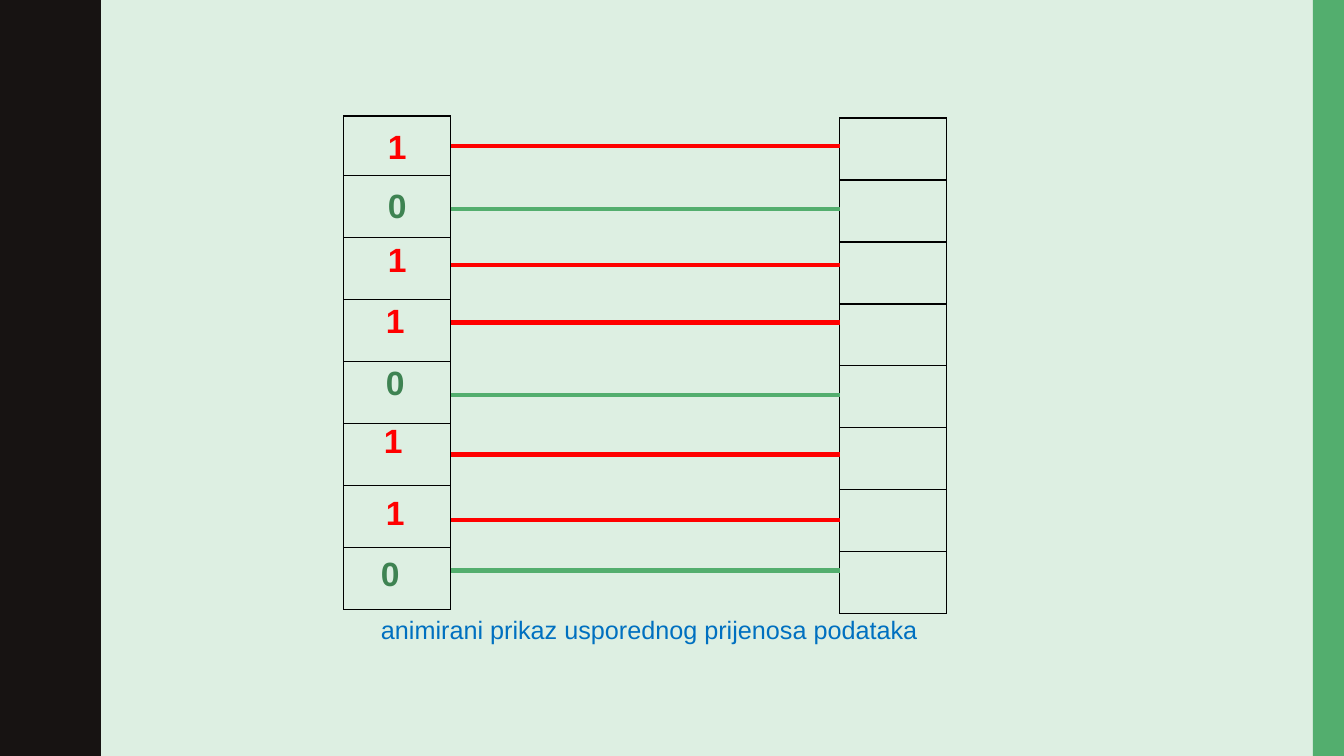
import pptx
import pptx.util
import pptx.dml.color
import pptx.enum.shapes
import pptx.enum.text
import pptx.oxml
import pptx.oxml.ns
from dataclasses import dataclass

BITS = [
    {"digit": "1", "center": (3.94, 1.45), "wire": 1.45},
    {"digit": "0", "center": (3.94, 2.03), "wire": 2.07},
    {"digit": "1", "center": (3.94, 2.57), "wire": 2.63},
    {"digit": "1", "center": (3.92, 3.18), "wire": 3.2},
    {"digit": "0", "center": (3.92, 3.79), "wire": 3.92},
    {"digit": "1", "center": (3.9, 4.37), "wire": 4.51},
    {"digit": "1", "center": (3.92, 5.08), "wire": 5.16},
    {"digit": "0", "center": (3.87, 5.69), "wire": 5.66},
]
CAPTION = "animirani prikaz usporednog prijenosa podataka"
HALF_WAVE = [
    (0.78, 0), (0.78, 0.07), (0.79, 0.14), (0.8, 0.2), (0.81, 0.25),
    (0.83, 0.29), (0.85, 0.33), (0.87, 0.38), (0.89, 0.42), (0.91, 0.46),
    (0.93, 0.5), (0.95, 0.55), (0.96, 0.61), (0.97, 0.68), (0.97, 0.75),
]
WAVE_COUNT = 5


@dataclass
class Theme:
    font: str = "Arial"
    background: str = "DDEFE2"
    dark: str = "171312"
    green: str = "53AE6E"
    zero: str = "3E8352"
    red: str = "FF0000"
    caption: str = "0070C0"
    border: str = "000000"
    digit_size: int = 24
    caption_size: int = 18
    wire_width: int = 3
    border_width: int = 1


THEME = Theme()
WIDTH, HEIGHT = 13.33, 7.5
CELL_WIDTH, CELL_HEIGHT = 1.06, 0.615
SENDER_LEFT, RECEIVER_LEFT = 3.41, 8.33
DIGIT_WIDTH, DIGIT_HEIGHT = 0.66, 0.6
inch = pptx.util.Inches


def color(value):
    return pptx.dml.color.RGBColor.from_string(value)


def paint(shape, value):
    shape.shadow.inherit = False
    shape.fill.solid()
    shape.fill.fore_color.rgb = color(value)
    shape.line.fill.background()


def add_wave(page):
    period = 2 * HALF_WAVE[-1][1]
    mirrored = [(x, period - y) for x, y in reversed(HALF_WAVE[:-1])]
    wave = HALF_WAVE[1:] + mirrored
    edge = [(x, y + number * period) for number in range(WAVE_COUNT) for x, y in wave]
    builder = page.shapes.build_freeform(0, 0, scale=float(inch(1)))
    builder.add_line_segments([HALF_WAVE[0]] + edge + [(0, HEIGHT)], close=True)
    paint(builder.convert_to_shape(), THEME.dark)


def add_band(page):
    left = 13.02
    band = page.shapes.add_shape(
        pptx.enum.shapes.MSO_SHAPE.RECTANGLE, inch(left), 0, inch(WIDTH - left), inch(HEIGHT))
    paint(band, THEME.green)


def add_text(page, text, area, size, value, bold, wrap, align):
    box = page.shapes.add_textbox(*[inch(length) for length in area])
    frame = box.text_frame
    frame.word_wrap = wrap
    frame.vertical_anchor = pptx.enum.text.MSO_ANCHOR.MIDDLE
    para = frame.paragraphs[0]
    para.alignment = align
    span = para.add_run()
    span.text = text
    span.font.name = THEME.font
    span.font.size = pptx.util.Pt(size)
    span.font.bold = bold
    span.font.color.rgb = color(value)


def add_borders(cell):
    properties = cell._tc.get_or_add_tcPr()
    width = pptx.util.Pt(THEME.border_width)
    for position, side in enumerate(("lnL", "lnR", "lnT", "lnB")):
        properties.insert(position, pptx.oxml.parse_xml(
            f'<a:{side} {pptx.oxml.ns.nsdecls("a")} w="{width}"><a:solidFill>'
            f'<a:srgbClr val="{THEME.border}"/></a:solidFill></a:{side}>'))


def add_register(page, left, top, heights):
    table = page.shapes.add_table(
        len(heights), 1, inch(left), inch(top), inch(CELL_WIDTH), inch(sum(heights))).table
    table.first_row = False
    table.horz_banding = False
    table.columns[0].width = inch(CELL_WIDTH)
    for row, height in zip(table.rows, heights):
        row.height = inch(height)
        cell = row.cells[0]
        cell.fill.background()
        add_borders(cell)


def add_wire(page, y, value):
    wire = page.shapes.add_connector(
        pptx.enum.shapes.MSO_CONNECTOR.STRAIGHT,
        inch(SENDER_LEFT + CELL_WIDTH), inch(y), inch(RECEIVER_LEFT), inch(y))
    wire.line.color.rgb = color(value)
    wire.line.width = pptx.util.Pt(THEME.wire_width)
    wire._element.spPr.append(pptx.oxml.parse_xml(
        f'<a:effectLst {pptx.oxml.ns.nsdecls("a")}/>'))


def main():
    deck = pptx.Presentation()
    deck.slide_width, deck.slide_height = inch(WIDTH), inch(HEIGHT)
    page = deck.slides.add_slide(deck.slide_layouts[6])
    page.background.fill.solid()
    page.background.fill.fore_color.rgb = color(THEME.background)
    add_wave(page)
    add_band(page)
    rows = len(BITS)
    add_register(page, SENDER_LEFT, 1.15, [0.59] + [CELL_HEIGHT] * (rows - 1))
    add_register(page, RECEIVER_LEFT, 1.17, [CELL_HEIGHT] * rows)
    align = pptx.enum.text.PP_ALIGN
    for bit in BITS:
        is_one = bit["digit"] == "1"
        x, y = bit["center"]
        area = (x - DIGIT_WIDTH / 2, y - DIGIT_HEIGHT / 2, DIGIT_WIDTH, DIGIT_HEIGHT)
        add_text(page, bit["digit"], area, THEME.digit_size,
                 THEME.red if is_one else THEME.zero, True, True, align.CENTER)
        add_wire(page, bit["wire"], THEME.red if is_one else THEME.green)
    add_text(page, CAPTION, (3.68, 6.04, 5.57, 0.4), THEME.caption_size,
             THEME.caption, False, False, align.LEFT)
    deck.save("out.pptx")


if __name__ == "__main__":
    main()
